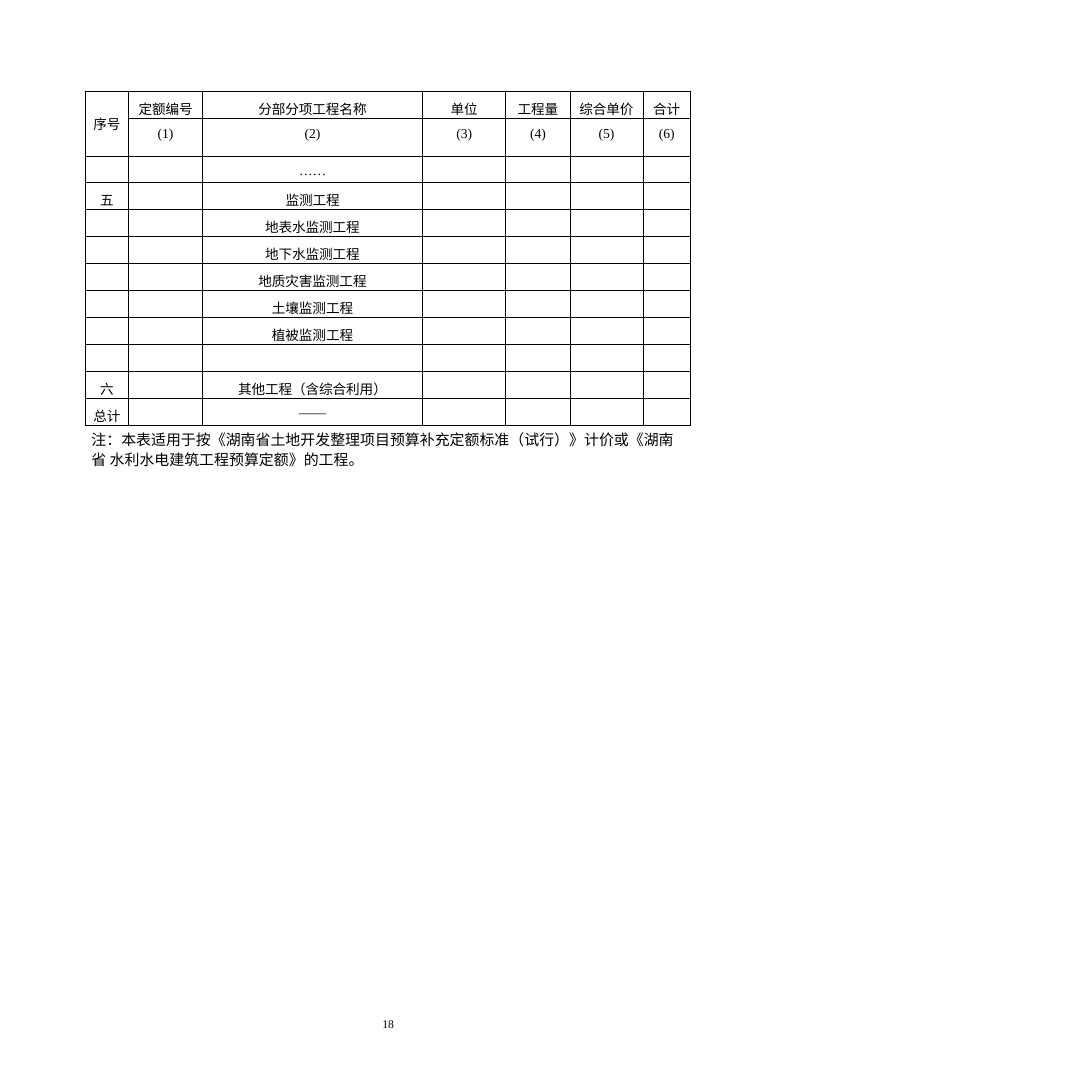
from lxml.etree import SubElement
from pptx import Presentation
from pptx.dml.color import RGBColor
from pptx.enum.text import MSO_ANCHOR, PP_ALIGN
from pptx.oxml import parse_xml
from pptx.oxml.ns import nsdecls, qn
from pptx.util import Inches, Pt

HAN_FONT = "Noto Sans CJK SC"
LATIN_FONT = "Times New Roman"
BLACK = "000000"

COLUMN_WIDTHS = [0.47, 0.79, 2.36, 0.89, 0.69, 0.78, 0.51]
ROW_HEIGHT = 0.28
CODE_ROW_HEIGHT = 0.4

HEADINGS = ["序号", "定额编号", "分部分项工程名称", "单位", "工程量", "综合单价", "合计"]
COLUMN_CODES = [""] + [f"({number})" for number in range(1, 7)]
# Serial number and name of each work item
WORK_ITEMS = [
    ("", "……"),
    ("五", "监测工程"),
    ("", "地表水监测工程"),
    ("", "地下水监测工程"),
    ("", "地质灾害监测工程"),
    ("", "土壤监测工程"),
    ("", "植被监测工程"),
    ("", ""),
    ("六", "其他工程（含综合利用）"),
    ("总计", "——"),
]
NOTE = ("注：本表适用于按《湖南省土地开发整理项目预算补充定额标准（试行）》计价或"
        "《湖南省 水利水电建筑工程预算定额》的工程。")


def color(hex_value):
    return RGBColor.from_string(hex_value)


def format_text(paragraph, size, font_name):
    for run in paragraph.runs:
        run.font.size = Pt(size)
        run.font.name = font_name
        run.font.color.rgb = color(BLACK)
        SubElement(run.font._element, qn("a:ea"), typeface=font_name)


def set_borders(cell):
    properties = cell._tc.get_or_add_tcPr()
    for position, side in enumerate(["lnL", "lnR", "lnT", "lnB"]):
        properties.insert(position, parse_xml(
            f'<a:{side} {nsdecls("a")} w="{Pt(0.5)}"><a:solidFill>'
            f'<a:srgbClr val="{BLACK}"/></a:solidFill></a:{side}>'))


def fill_cell(cell, text):
    cell.fill.background()
    set_borders(cell)
    cell.margin_left = cell.margin_right = cell.margin_bottom = 0
    cell.margin_top = Inches(0.08) if text else 0
    paragraph = cell.text_frame.paragraphs[0]
    paragraph.alignment = PP_ALIGN.CENTER
    if text:
        paragraph.text = text
        is_latin = text[0] in "(…—"
        format_text(paragraph, 10.5, LATIN_FONT if is_latin else HAN_FONT)
    else:
        paragraph.font.size = Pt(10.5)


def add_budget_table(slide):
    rows = [HEADINGS, COLUMN_CODES]
    rows += [[serial, "", name, "", "", "", ""] for serial, name in WORK_ITEMS]
    budget = slide.shapes.add_table(
        len(rows), len(COLUMN_WIDTHS), Inches(0.91), Inches(0.98),
        Inches(sum(COLUMN_WIDTHS)), Inches(ROW_HEIGHT * len(rows))).table
    budget.first_row = budget.horz_banding = False
    for column, width in zip(budget.columns, COLUMN_WIDTHS):
        column.width = Inches(width)
    for row_index, texts in enumerate(rows):
        is_code_row = texts is COLUMN_CODES
        budget.rows[row_index].height = Inches(
            CODE_ROW_HEIGHT if is_code_row else ROW_HEIGHT)
        for column_index, text in enumerate(texts):
            fill_cell(budget.cell(row_index, column_index), text)

    # Serial heading spans both heading rows
    serial_heading = budget.cell(0, 0)
    serial_heading.merge(budget.cell(1, 0))
    serial_heading.margin_top = 0
    serial_heading.vertical_anchor = MSO_ANCHOR.MIDDLE


def add_text(slide, text, left, top, width, height, size, font_name):
    frame = slide.shapes.add_textbox(
        Inches(left), Inches(top), Inches(width), Inches(height)).text_frame
    frame.word_wrap = True
    frame.margin_left = frame.margin_right = Inches(0.01)
    frame.margin_top = frame.margin_bottom = 0
    paragraph = frame.paragraphs[0]
    paragraph.text = text
    format_text(paragraph, size, font_name)
    return paragraph


def main():
    presentation = Presentation()
    presentation.slide_width = Inches(11.69)
    presentation.slide_height = Inches(11.7)
    slide = presentation.slides.add_slide(presentation.slide_layouts[6])

    # Table of work items
    add_budget_table(slide)

    # Note below the table
    note = add_text(slide, NOTE, 0.97, 4.59, 6.37, 0.46, 11.5, HAN_FONT)
    note.line_spacing = Pt(15.4)

    # Page number
    page_number = add_text(slide, "18", 4.07, 10.9, 0.18, 0.17, 9, LATIN_FONT)
    page_number.alignment = PP_ALIGN.CENTER

    presentation.save("out.pptx")


if __name__ == "__main__":
    main()
